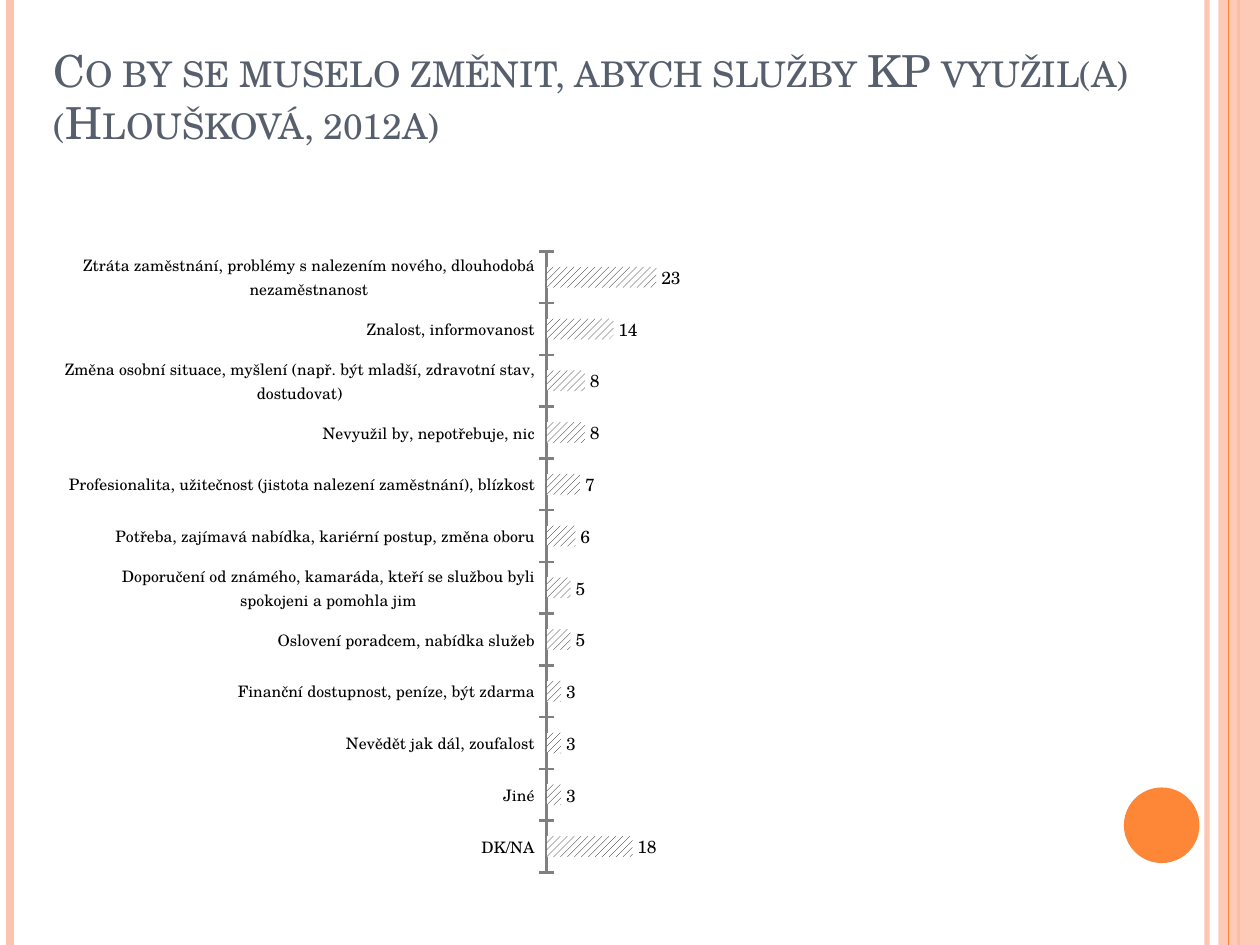
from lxml import etree
from pptx import Presentation
from pptx.chart.data import CategoryChartData
from pptx.dml.color import RGBColor
from pptx.enum.chart import XL_CHART_TYPE, XL_LABEL_POSITION, XL_TICK_LABEL_POSITION, XL_TICK_MARK
from pptx.enum.dml import MSO_PATTERN
from pptx.enum.shapes import MSO_CONNECTOR, MSO_SHAPE
from pptx.enum.text import MSO_ANCHOR, PP_ALIGN
from pptx.oxml.ns import qn
from pptx.util import Inches, Pt

BAR = XL_CHART_TYPE.BAR_CLUSTERED
OUTSIDE_END = XL_LABEL_POSITION.OUTSIDE_END
LABELS_LOW = XL_TICK_LABEL_POSITION.LOW
TICK_CROSS = XL_TICK_MARK.CROSS
DIAGONAL = MSO_PATTERN.WIDE_UPWARD_DIAGONAL
STRAIGHT = MSO_CONNECTOR.STRAIGHT
RECTANGLE, OVAL = MSO_SHAPE.RECTANGLE, MSO_SHAPE.OVAL

# Content
TITLE = "Co by se muselo změnit, abych služby KP využil(a) (Hloušková, 2012a)"
ANSWERS = [
    ("Ztráta zaměstnání, problémy s nalezením nového, dlouhodobá nezaměstnanost", 23),
    ("Znalost, informovanost", 14),
    ("Změna osobní situace, myšlení (např. být mladší, zdravotní stav, dostudovat)", 8),
    ("Nevyužil by, nepotřebuje, nic", 8),
    ("Profesionalita, užitečnost (jistota nalezení zaměstnání), blízkost", 7),
    ("Potřeba, zajímavá nabídka, kariérní postup, změna oboru", 6),
    ("Doporučení od známého, kamaráda, kteří se službou byli spokojeni a pomohla jim", 5),
    ("Oslovení poradcem, nabídka služeb", 5),
    ("Finanční dostupnost, peníze, být zdarma", 3),
    ("Nevědět jak dál, zoufalost", 3),
    ("Jiné", 3),
    ("DK/NA", 18),
]
PLOT_AREA = {"x": 0.47, "y": 0.046, "w": 0.463, "h": 0.925}

THEME = {
    "font": "TeX Gyre Schola",
    "title": RGBColor.from_string("575F6D"),
    "text": RGBColor.from_string("000000"),
    "paper": RGBColor.from_string("FFFFFF"),
    "axis": RGBColor.from_string("808080"),
    "peach": RGBColor.from_string("FEC3AE"),
    "orange": RGBColor.from_string("FE8637"),
    "title_size": Pt(25.2),
    "value_size": Pt(10),
    "category_size": Pt(9),
}
SLIDE_W, SLIDE_H = 10, 7.5
# Vertical stripes: x, colour, width in points, opacity in percent
STRIPES_BEHIND = [(9.58, "peach", 3, 93), (0.08, "peach", 4.5, 100), (9.83, "orange", 1.5, 100)]
STRIPE_FRONT = (9.75, "orange", 0.75, 100)


def set_opacity(part, percent):
    if percent < 100:
        color = next(part._element.spPr.iter(qn("a:srgbClr")))
        etree.SubElement(color, qn("a:alpha"), val=str(percent * 1000))


def add_stripe(slide, x, color, width, opacity):
    stripe = slide.shapes.add_connector(STRAIGHT, Inches(x), 0, Inches(x), Inches(SLIDE_H))
    stripe.line.color.rgb = THEME[color]
    stripe.line.width = Pt(width)
    set_opacity(stripe, opacity)
    etree.SubElement(stripe._element.spPr, qn("a:effectLst"))


def add_solid(slide, kind, box, color, opacity=100):
    solid = slide.shapes.add_shape(kind, *map(Inches, box))
    solid.shadow.inherit = False
    solid.fill.solid()
    solid.fill.fore_color.rgb = THEME[color]
    solid.line.fill.background()
    set_opacity(solid, opacity)


def add_title(slide):
    frame = slide.shapes.add_textbox(*map(Inches, (0.33, 0.25, 9.33, 0.98))).text_frame
    frame.word_wrap = True
    frame.vertical_anchor = MSO_ANCHOR.BOTTOM
    paragraph = frame.paragraphs[0]
    paragraph.alignment = PP_ALIGN.LEFT
    run = paragraph.add_run()
    run.text = TITLE
    run.font.name = THEME["font"]
    run.font.size = THEME["title_size"]
    run.font.color.rgb = THEME["title"]
    run.font._element.set("cap", "small")


def set_plot_layout(chart):
    plot_area = chart._chartSpace.chart.plotArea
    for old in plot_area.findall(qn("c:layout")):
        plot_area.remove(old)
    layout = etree.Element(qn("c:layout"))
    manual = etree.SubElement(layout, qn("c:manualLayout"))
    settings = {"layoutTarget": "inner", "xMode": "edge", "yMode": "edge", **PLOT_AREA}
    for tag, value in settings.items():
        etree.SubElement(manual, qn(f"c:{tag}"), val=str(value))
    plot_area.insert(0, layout)


def add_answers_chart(slide):
    data = CategoryChartData(number_format="0")
    data.categories = [answer for answer, _ in ANSWERS]
    data.add_series("Series 1", [percent for _, percent in ANSWERS])
    chart = slide.shapes.add_chart(BAR, *map(Inches, (0.5, 1.75, 8.17, 5.33)), data).chart
    chart.has_title = False
    chart.has_legend = False
    chart.font.name = THEME["font"]
    chart.font.size = THEME["value_size"]
    chart.font.color.rgb = THEME["text"]
    set_plot_layout(chart)

    # Axes
    categories = chart.category_axis
    categories.reverse_order = True
    categories.major_tick_mark = TICK_CROSS
    categories.tick_label_position = LABELS_LOW
    categories.tick_labels.font.size = THEME["category_size"]
    categories.format.line.color.rgb = THEME["axis"]
    categories.format.line.width = Pt(1.5)
    values = chart.value_axis
    values.minimum_scale, values.maximum_scale, values.major_unit = 0, 100, 25
    values.has_major_gridlines = False
    values.visible = False

    # Hatched bars with their values
    plot = chart.plots[0]
    plot.gap_width = 150
    plot.vary_by_categories = False
    bars = plot.series[0].format
    bars.fill.patterned()
    bars.fill.pattern = DIAGONAL
    bars.fill.fore_color.rgb = THEME["text"]
    bars.fill.back_color.rgb = THEME["paper"]
    bars.line.fill.background()
    labels = plot.series[0].data_labels
    labels.show_value = True
    labels.number_format = "0"
    labels.number_format_is_linked = False
    labels.position = OUTSIDE_END


def main():
    deck = Presentation()
    deck.slide_width, deck.slide_height = Inches(SLIDE_W), Inches(SLIDE_H)
    slide = deck.slides.add_slide(deck.slide_layouts[6])

    # Edge decoration
    for stripe in STRIPES_BEHIND:
        add_stripe(slide, *stripe)
    add_solid(slide, RECTANGLE, (9.67, 0, 0.33, SLIDE_H), "peach", 87)
    add_stripe(slide, *STRIPE_FRONT)
    add_solid(slide, OVAL, (8.92, 6.25, 0.6, 0.6), "orange")

    add_title(slide)
    add_answers_chart(slide)
    deck.save("out.pptx")


if __name__ == "__main__":
    main()
